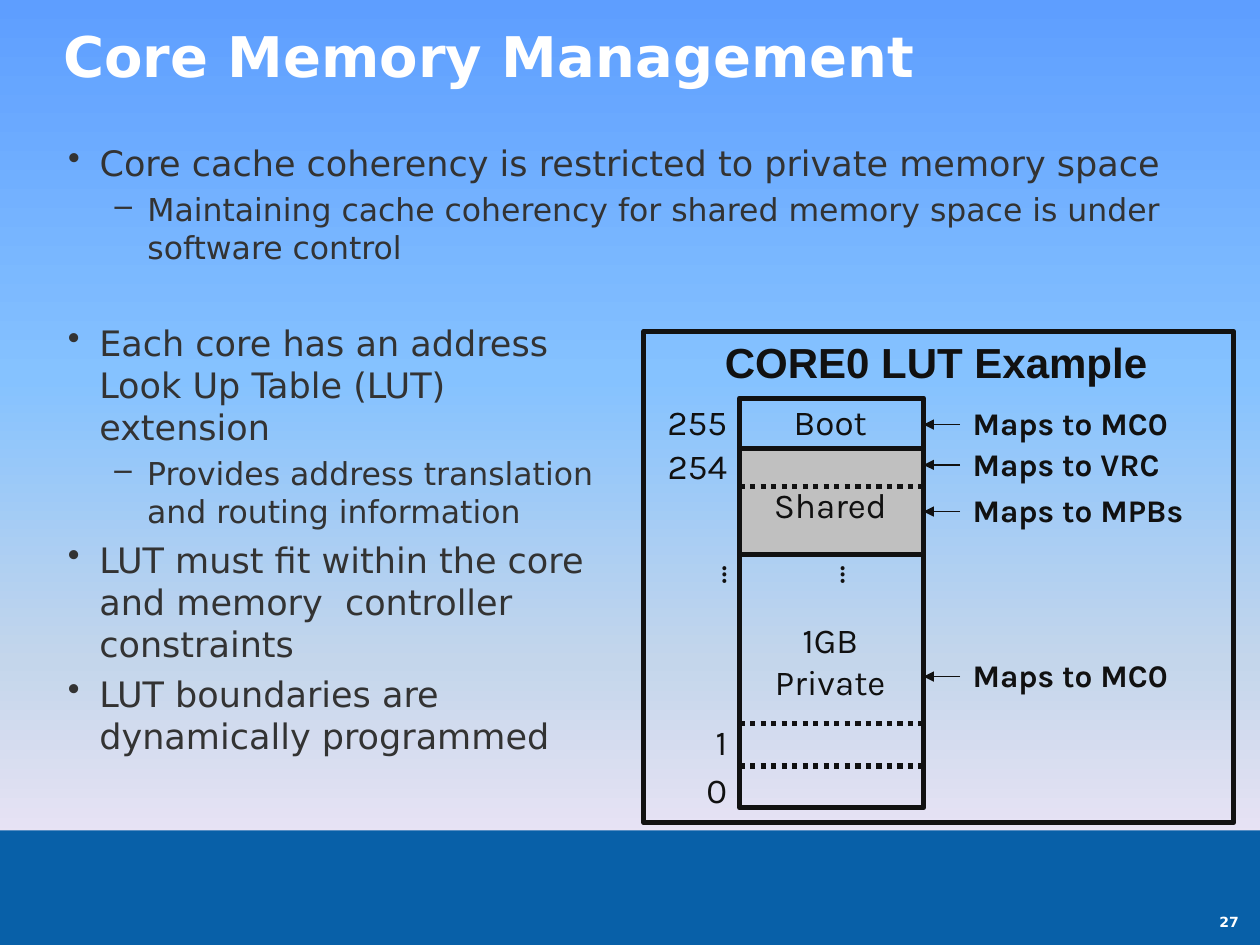
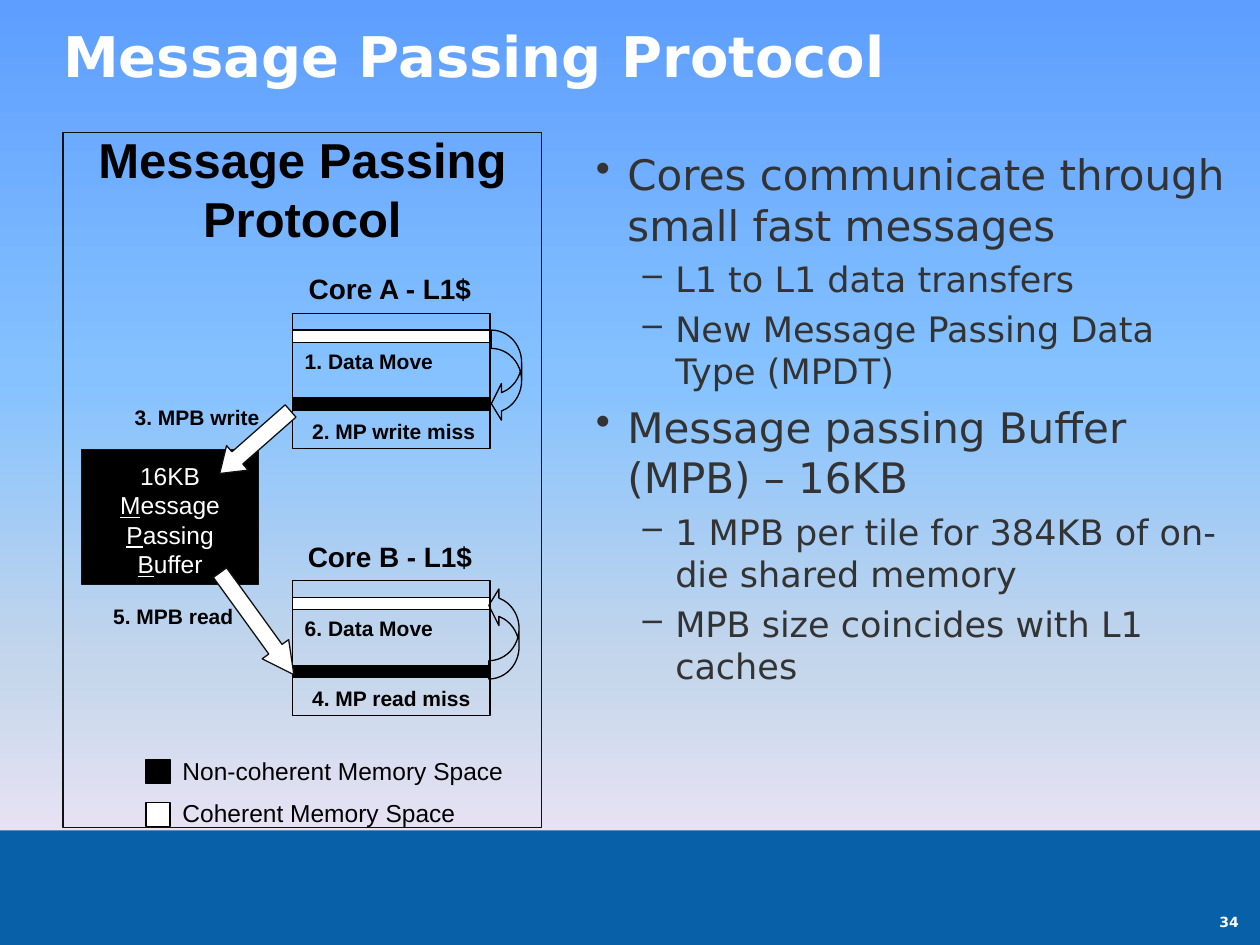
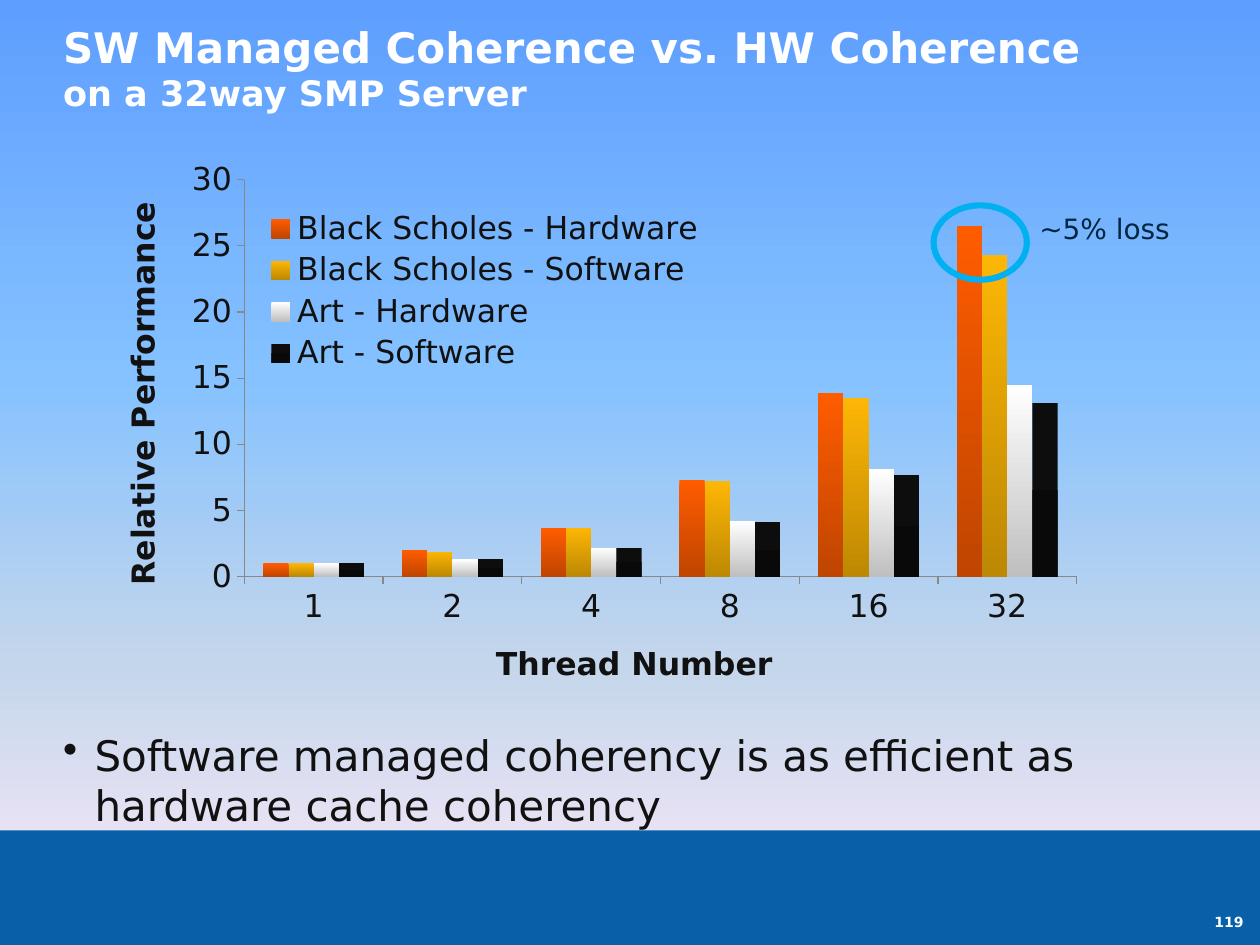
"""Build three slides on memory management and coherence of a many-core chip."""
from lxml import etree
from pptx import Presentation
from pptx.chart.data import CategoryChartData
from pptx.dml.color import RGBColor
from pptx.enum.chart import XL_CHART_TYPE, XL_LEGEND_POSITION, XL_TICK_MARK
from pptx.enum.dml import MSO_LINE
from pptx.enum.shapes import MSO_CONNECTOR, MSO_SHAPE
from pptx.enum.text import MSO_ANCHOR, MSO_AUTO_SIZE, PP_ALIGN
from pptx.oxml.ns import qn
from pptx.util import Inches, Pt

LEFT, CENTER, RIGHT = PP_ALIGN.LEFT, PP_ALIGN.CENTER, PP_ALIGN.RIGHT
RECTANGLE, OVAL = MSO_SHAPE.RECTANGLE, MSO_SHAPE.OVAL
LEFT_ARROW, CURVED_ARROW = MSO_SHAPE.LEFT_ARROW, MSO_SHAPE.CURVED_LEFT_ARROW
STRAIGHT = MSO_CONNECTOR.STRAIGHT
DOTTED = MSO_LINE.ROUND_DOT
COLUMNS = XL_CHART_TYPE.COLUMN_CLUSTERED
LEGEND_LEFT = XL_LEGEND_POSITION.LEFT
TICK_OUTSIDE = XL_TICK_MARK.OUTSIDE

SANS, ARIAL, KARLA = "DejaVu Sans", "Arial", "Karla"
INK, BLACK, WHITE, BODY = "111111", "000000", "FFFFFF", "333333"
BAND, GRAY, AXIS = "0860A8", "C0C0C0", "888888"
RING, NOTE = "00B0F0", "032643"
SKY = [(0, "5E9EFF"), (40, "85C2FF"), (70, "C4D6EB"), (100, "FFEBFA")]
BULLETS = [("•", 0.25, -0.25), ("–", 0.63, -0.26)]


def rgb(value):
    """Turn a hex string into a colour."""
    return RGBColor.from_string(value)


def darker(value):
    """Return the hex string of a colour at three quarters of its strength."""
    return "".join(f"{int(value[i:i + 2], 16) * 3 // 4:02X}" for i in (0, 2, 4))


def style_font(font, name, size, color, bold=False):
    """Set face, size, colour and weight of a font."""
    font.name, font.size, font.bold = name, Pt(size), bold
    font.color.rgb = rgb(color)


def style_runs(paragraph, name, size, color, bold=False):
    """Format every run of a paragraph alike."""
    for span in paragraph.runs:
        style_font(span.font, name, size, color, bold)


def add_box(page, left, top, width, height, inset=True):
    """Add an empty wrapping text box and return its shape."""
    box = page.shapes.add_textbox(Inches(left), Inches(top), Inches(width), Inches(height))
    frame = box.text_frame
    frame.word_wrap = True
    if not inset:
        clear_insets(frame)
    return box


def clear_insets(frame):
    """Remove the inner margins of a text frame."""
    frame.margin_left = frame.margin_right = frame.margin_top = frame.margin_bottom = 0


def add_label(page, at, text, name, size, color=INK, bold=False, align=LEFT, gap=0):
    """Add plain text, one paragraph a line, and return its box."""
    box = add_box(page, *at)
    box.text_frame.text = text
    for index, paragraph in enumerate(box.text_frame.paragraphs):
        paragraph.alignment = align
        if index and gap:
            paragraph.space_before = Pt(gap)
        style_runs(paragraph, name, size, color, bold)
    return box


def add_bullets(page, at, items, sizes, color=BODY, inset=False):
    """Add a list of (level, text) items with bullets and hanging indents."""
    frame = add_box(page, *at, inset=inset).text_frame
    frame.text = "\n".join(text for _, text in items)
    for index, (paragraph, (level, _)) in enumerate(zip(frame.paragraphs, items)):
        mark, margin, indent = BULLETS[level]
        paragraph.level = level
        properties = paragraph._p.get_or_add_pPr()
        properties.set("marL", str(Inches(margin)))
        properties.set("indent", str(Inches(indent)))
        etree.SubElement(properties, qn("a:buChar"), char=mark)
        if index:
            paragraph.space_before = Pt(0.23 * sizes[level])
        style_runs(paragraph, SANS, sizes[level], color)


def add_figure(page, kind, at, fill=None, line=None, width=0.75, rotation=0, flip=None,
               adjust=()):
    """Add a preset shape with optional fill, outline, turn and flip."""
    shape = page.shapes.add_shape(kind, *map(Inches, at))
    shape.shadow.inherit = False
    shape.rotation = rotation
    for index, value in enumerate(adjust):
        shape.adjustments[index] = value
    if fill:
        shape.fill.solid()
        shape.fill.fore_color.rgb = rgb(fill)
    else:
        shape.fill.background()
    if line:
        shape.line.color.rgb = rgb(line)
        shape.line.width = Pt(width)
    else:
        shape.line.fill.background()
    if flip:
        shape.element.spPr.find(qn("a:xfrm")).set(flip, "1")
    return shape


def add_line(page, start, end, width, dash=None, arrow=False):
    """Add a straight line, dotted or with an arrowhead on request."""
    line = page.shapes.add_connector(STRAIGHT, *map(Inches, (*start, *end)))
    line.line.color.rgb = rgb(INK)
    line.line.width = Pt(width)
    if dash:
        line.line.dash_style = dash
    if arrow:
        etree.SubElement(line.line._get_or_add_ln(), qn("a:tailEnd"), type="triangle")
    etree.SubElement(line.element.spPr, qn("a:effectLst"))


def paint_sky(master):
    """Give the master its vertical gradient background."""
    fill = master.background.fill
    fill.gradient()
    fill.gradient_angle = 270
    stops = master.element.find(".//" + qn("a:gsLst"))
    for stop in list(stops):
        stops.remove(stop)
    for position, color in SKY:
        stop = etree.SubElement(stops, qn("a:gs"), pos=str(position * 1000))
        etree.SubElement(stop, qn("a:srgbClr"), val=color)


def start_page(deck, title, number, sizes=(32,)):
    """Add a slide with band, title and slide number."""
    page = deck.slides.add_slide(deck.slide_layouts[5])
    add_figure(page, RECTANGLE, (0, 6.59, 10, 0.91), BAND)
    heading = page.shapes.title
    heading.left, heading.top = Inches(0.5), Inches(0.17)
    heading.width, heading.height = Inches(9.01), Inches(0.97)
    frame = heading.text_frame
    clear_insets(frame)
    frame.vertical_anchor = MSO_ANCHOR.TOP
    frame.auto_size = MSO_AUTO_SIZE.NONE
    frame.text = title
    paragraph = frame.paragraphs[0]
    paragraph.alignment = LEFT
    for span, size in zip(paragraph.runs, sizes):
        style_font(span.font, SANS, size, WHITE, True)
    footer = add_label(page, (9.53, 7.28, 0.45, 0.33), number, SANS, 8, WHITE, True, CENTER)
    clear_insets(footer.text_frame)
    footer.text_frame.paragraphs[0].line_spacing = 0.8
    return page


def draw_lookup_table(page):
    """Draw the address table of core 0 with its targets."""
    left, right, width = 5.87, 7.33, 1.44
    add_figure(page, RECTANGLE, (left, 3.56, width, 0.84), GRAY)
    add_figure(page, RECTANGLE, (left, 3.16, 1.46, 3.25), None, INK, 3)
    for y, dash in [(3.56, None), (3.86, DOTTED), (4.4, None), (5.74, DOTTED), (6.08, DOTTED)]:
        add_line(page, (left, y), (left + width, y), 3, dash)
    for top, height, text in [(3.13, 0.43, "Boot"), (3.79, 0.43, "Shared"),
                              (4.86, 0.77, "1GB\nPrivate")]:
        add_label(page, (left, top, width, height), text, KARLA, 20, align=CENTER)
    for y, target in [(3.37, "MC0"), (3.69, "VRC"), (4.06, "MPBs"), (5.37, "MC0")]:
        add_line(page, (7.62, y), (right, y), 0.75, arrow=True)
        add_label(page, (7.62, y - 0.21, 1.95, 0.4), f"Maps to {target}", KARLA, 18, bold=True)
    for top, entry in [(3.13, "255"), (3.48, "254"), (5.67, "1"), (6.05, "0")]:
        add_label(page, (5.09, top, 0.78, 0.43), entry, KARLA, 20, align=RIGHT)
    for x in (5.26, 6.2):
        add_label(page, (x, 4.35, 0.78, 0.43), "…", KARLA, 20, align=CENTER).rotation = 270
    add_label(page, (5.11, 2.62, 4.64, 0.5), "CORE0 LUT Example", ARIAL, 24, bold=True,
              align=CENTER)
    add_figure(page, RECTANGLE, (5.11, 2.63, 4.68, 3.9), None, INK, 3)


def draw_core(page, top, name, move, miss):
    """Draw the cache of one core with its two memory lines."""
    left, width = 2.32, 1.57
    add_figure(page, RECTANGLE, (left, top, width, 1.07), None, BLACK)
    add_figure(page, RECTANGLE, (left, top + 0.13, width, 0.1), WHITE, BLACK)
    add_figure(page, RECTANGLE, (left, top + 0.67, width, 0.1), BLACK, BLACK)
    add_label(page, (left, top - 0.38, 1.55, 0.37), name, ARIAL, 16, BLACK, True, CENTER)
    add_step(page, left, top + 0.23, 1.49, move)
    add_step(page, left + 0.06, top + 0.78, 2.27, miss)


def add_step(page, left, top, width, text):
    """Add the label of one protocol step."""
    add_label(page, (left, top, width, 0.3), text, ARIAL, 12, BLACK, True)


def draw_buffer(page):
    """Draw the message passing buffer with underlined initials."""
    at = (0.65, 3.57, 1.4, 1.07)
    add_figure(page, RECTANGLE, at, BLACK, INK)
    paragraph = add_box(page, 0.65, 3.61, 1.4, 1.03).text_frame.paragraphs[0]
    paragraph.alignment = CENTER
    for text in ("16KB ", "M", "essage ", "P", "assing ", "B", "uffer"):
        span = paragraph.add_run()
        span.text = text
        style_font(span.font, ARIAL, 14, WHITE)
        span.font.underline = len(text) == 1


def draw_protocol(page):
    """Draw the path of a message from core A to core B."""
    add_figure(page, RECTANGLE, (0.5, 1.05, 3.8, 5.52), None, INK)
    add_label(page, (0.5, 0.98, 3.8, 1.03), "Message Passing Protocol", ARIAL, 28, BLACK, True,
              CENTER)
    draw_buffer(page)
    draw_core(page, 2.49, "Core A - L1$", "1. Data Move", "2. MP write miss")
    draw_core(page, 4.61, "Core B - L1$", "6. Data Move", "4. MP read miss")
    for left, top, flip in [(3.9, 2.62, None), (3.88, 4.66, "flipV")]:
        add_figure(page, CURVED_ARROW, (left, top, 0.24, 0.73), None, BLACK, flip=flip,
                   adjust=(0.606, 1.212, 0.333))
    add_figure(page, LEFT_ARROW, (1.65, 3.38, 0.75, 0.26), WHITE, INK, rotation=318.6,
               adjust=(0.5, 0.72))
    add_figure(page, LEFT_ARROW, (1.54, 4.82, 1, 0.26), WHITE, INK, rotation=54.1,
               flip="flipH", adjust=(0.5, 0.962))
    add_step(page, 0.97, 3.16, 1.35, "3. MPB write")
    add_step(page, 0.8, 4.74, 1.35, "5. MPB read")
    for top, fill in [(6.03, BLACK), (6.37, WHITE)]:
        add_figure(page, RECTANGLE, (1.16, top, 0.19, 0.19), fill, BLACK)
    add_label(page, (1.35, 5.95, 2.76, 0.68), "Non-coherent Memory Space\nCoherent Memory Space",
              ARIAL, 14, BLACK, gap=7)


def make_layout(inner, x, y, w, h):
    """Return a manual chart layout in fractions of the chart."""
    layout = etree.Element(qn("c:layout"))
    manual = etree.SubElement(layout, qn("c:manualLayout"))
    settings = [("layoutTarget", "inner")] if inner else []
    settings += [("xMode", "edge"), ("yMode", "edge"), ("x", x), ("y", y), ("w", w), ("h", h)]
    for tag, value in settings:
        etree.SubElement(manual, qn("c:" + tag), val=str(value))
    return layout


def style_axis(axis, title):
    """Give an axis its title, line and ticks."""
    axis.has_major_gridlines = False
    axis.major_tick_mark = TICK_OUTSIDE
    axis.format.line.color.rgb = rgb(AXIS)
    axis.axis_title.text_frame.text = title
    style_runs(axis.axis_title.text_frame.paragraphs[0], SANS, 18, INK, True)


def add_performance_chart(page):
    """Add the column chart of performance by thread number."""
    series = [("Black Scholes - Hardware", (1, 2, 3.7, 7.3, 13.9, 26.5), "FF5C00"),
              ("Black Scholes - Software", (1, 1.9, 3.7, 7.2, 13.5, 24.3), "FDB605"),
              ("Art - Hardware", (1, 1.3, 2.2, 4.2, 8.1, 14.5), WHITE),
              ("Art - Software", (1, 1.3, 2.2, 4.1, 7.7, 13.1), "0D0D0D")]
    data = CategoryChartData()
    data.categories = ["1", "2", "4", "8", "16", "32"]
    for name, values, _ in series:
        data.add_series(name, values)
    chart = page.shapes.add_chart(COLUMNS, Inches(0.76), Inches(1.28), Inches(7.92),
                                  Inches(4.38), data).chart
    chart.has_title = False
    style_font(chart.font, SANS, 18, INK)
    style_axis(chart.category_axis, "Thread Number")
    style_axis(chart.value_axis, "Relative Performance")
    chart.value_axis.minimum_scale, chart.value_axis.maximum_scale = 0, 30
    chart.value_axis.major_unit = 5
    plot = chart.plots[0]
    plot.gap_width, plot.overlap, plot.vary_by_categories = 150, 0, False
    for columns, (_, _, color) in zip(plot.series, series):
        columns.invert_if_negative = False
        fill = columns.format.fill
        fill.gradient()
        fill.gradient_angle = 270
        for stop, shade in zip(fill.gradient_stops, (color, darker(color))):
            stop.color.rgb = rgb(shade)
    chart.has_legend = True
    chart.legend.position = LEGEND_LEFT
    chart.legend.include_in_layout = False
    legend = chart.element.find(".//" + qn("c:legend"))
    area = chart.element.find(".//" + qn("c:plotArea"))
    for parent in (legend, area):
        for layout in parent.findall(qn("c:layout")):
            parent.remove(layout)
    legend.insert(1, make_layout(False, 0.17, 0.08, 0.44, 0.31))
    area.insert(0, make_layout(True, 0.149, 0.033, 0.834, 0.72))


def main():
    """Build the deck and save it."""
    deck = Presentation()
    deck.slide_width, deck.slide_height = Inches(10), Inches(7.5)
    paint_sky(deck.slide_master)

    page = start_page(deck, "Core Memory Management", "27")
    add_bullets(page, (0.54, 1.12, 9.01, 1.2), [
        (0, "Core cache coherency is restricted to private memory space"),
        (1, "Maintaining cache coherency for shared memory space is under software control"),
    ], (20, 18))
    add_bullets(page, (0.44, 2.5, 4.56, 4.11), [
        (0, "Each core has an address Look Up Table (LUT) extension"),
        (1, "Provides address translation and routing information"),
        (0, "LUT must fit within the core and memory  controller constraints"),
        (0, "LUT boundaries are dynamically programmed"),
    ], (20, 18), inset=True)
    draw_lookup_table(page)

    page = start_page(deck, "Message Passing Protocol", "34")
    draw_protocol(page)
    add_bullets(page, (4.73, 1.18, 5.1, 4.3), [
        (0, "Cores communicate through small fast messages"),
        (1, "L1 to L1 data transfers"),
        (1, "New Message Passing Data Type (MPDT)"),
        (0, "Message passing Buffer (MPB) – 16KB"),
        (1, "1 MPB per tile for 384KB of on-die shared memory"),
        (1, "MPB size coincides with L1 caches"),
    ], (24, 20))

    page = start_page(deck, "SW Managed Coherence vs. HW Coherence\von a 32way SMP Server", "119",
                      (24, 20))
    add_bullets(page, (0.5, 5.79, 9.01, 1.17), [
        (0, "Software managed coherency is as efficient as hardware cache coherency"),
    ], (24,), INK)
    add_performance_chart(page)
    add_figure(page, OVAL, (7.41, 1.63, 0.74, 0.59), None, RING, 3.5)
    add_label(page, (8.15, 1.63, 1.28, 0.37), "~5% loss", SANS, 16, NOTE)
    deck.save("out.pptx")


if __name__ == "__main__":
    main()
